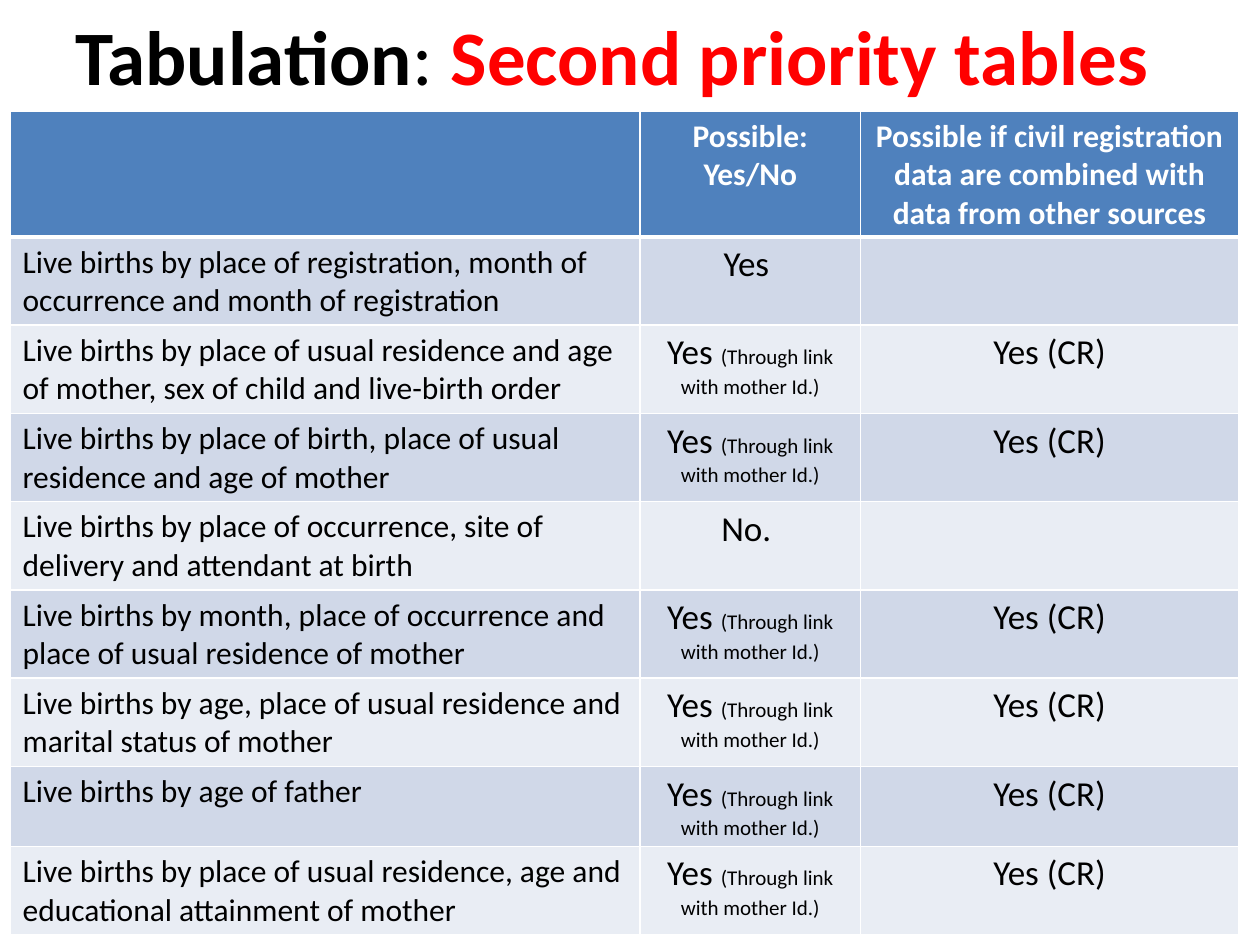
import pptx
import pptx.dml.color
import pptx.enum.text
import pptx.oxml.ns
import pptx.util
from lxml import etree

Inches = pptx.util.Inches
Pt = pptx.util.Pt
ALIGN = pptx.enum.text.PP_ALIGN

FONT = "Calibri"
COLORS = {
    "black": "000000",
    "white": "FFFFFF",
    "red": "FF0000",
    "header": "4F81BD",
    "odd": "D0D8E8",
    "even": "E9EDF4",
}

COL_WIDTHS = [5, 1.75, 3]
HEADER_HEIGHT, ROW_HEIGHT, SHORT_ROW_HEIGHT = 1, 0.69, 0.45

HEADERS = [
    "",
    "Possible: Yes/No",
    "Possible if civil registration data are combined with data from other sources",
]
YES = [("Yes ", 20)]
NO = [("No. ", 20)]
LINKED = YES + [("(Through link with mother Id.)", 12)]
COMBINED = [("Yes (CR)", 20)]
ROWS = [
    ("Live births by place of registration, month of occurrence and month of registration", YES, []),
    ("Live births by place of usual residence and age of mother, sex of child and live-birth order", LINKED, COMBINED),
    ("Live births by place of birth, place of usual residence and age of mother", LINKED, COMBINED),
    ("Live births by place of occurrence, site of delivery and attendant at birth", NO, []),
    ("Live births by month, place of occurrence and place of usual residence of mother", LINKED, COMBINED),
    ("Live births by age, place of usual residence and marital status of mother", LINKED, COMBINED),
    ("Live births by age of father", LINKED, COMBINED),
    ("Live births by place of usual residence, age and educational attainment of mother", LINKED, COMBINED),
]
SHORT_ROW = 7


def rgb(name):
    return pptx.dml.color.RGBColor.from_string(COLORS[name])


def add_title(s):
    tb = s.shapes.add_textbox(Inches(0.5), Inches(0.04), Inches(9), Inches(0.79))
    tf = tb.text_frame
    tf.word_wrap = True
    tf.vertical_anchor = pptx.enum.text.MSO_ANCHOR.MIDDLE
    p = tf.paragraphs[0]
    p.font.name, p.font.size = FONT, Pt(44)
    for text, color, bold in [
        ("Tabulation", "black", True),
        (": ", "black", False),
        ("Second priority tables", "red", True),
    ]:
        r = p.add_run()
        r.text = text
        r.font.bold = bold
        r.font.color.rgb = rgb(color)


def set_borders(cell, bottom):
    """Draw white lines of 1 pt, with the given width in points below."""
    tc_pr = cell._tc.get_or_add_tcPr()
    qn = pptx.oxml.ns.qn
    widths = {"a:lnL": 1, "a:lnR": 1, "a:lnT": 1, "a:lnB": bottom}
    for i, (tag, width) in enumerate(widths.items()):
        ln = etree.Element(qn(tag), w=str(Pt(width)))
        fill = etree.SubElement(ln, qn("a:solidFill"))
        etree.SubElement(fill, qn("a:srgbClr"), val=COLORS["white"])
        tc_pr.insert(i, ln)


def fill_cell(cell, runs, fill, color="black", bold=False, align=ALIGN.CENTER, bottom=1):
    cell.fill.solid()
    cell.fill.fore_color.rgb = rgb(fill)
    set_borders(cell, bottom)
    p = cell.text_frame.paragraphs[0]
    p.alignment = align
    p.font.name, p.font.size, p.font.bold = FONT, Pt(18), bold
    p.font.color.rgb = rgb(color)
    for text, size in runs:
        r = p.add_run()
        r.text = text
        r.font.size = Pt(size)


def add_priority_table(s):
    heights = [HEADER_HEIGHT] + [ROW_HEIGHT] * len(ROWS)
    heights[SHORT_ROW] = SHORT_ROW_HEIGHT
    table = s.shapes.add_table(
        len(heights), len(COL_WIDTHS), Inches(0.08), Inches(0.88),
        Inches(sum(COL_WIDTHS)), Inches(sum(heights)),
    ).table
    for col, width in zip(table.columns, COL_WIDTHS):
        col.width = Inches(width)
    for row, height in zip(table.rows, heights):
        row.height = Inches(height)

    for c, text in enumerate(HEADERS):
        runs = [(text, 18)] if text else []
        fill_cell(table.cell(0, c), runs, "header", "white", bold=True, bottom=3)
    for i, (topic, possible, combined) in enumerate(ROWS, start=1):
        fill = "odd" if i % 2 else "even"
        fill_cell(table.cell(i, 0), [(topic, 18)], fill, align=ALIGN.LEFT)
        fill_cell(table.cell(i, 1), possible, fill)
        fill_cell(table.cell(i, 2), combined, fill)


def main():
    prs = pptx.Presentation()
    prs.slide_width, prs.slide_height = Inches(10), Inches(7.5)
    s = prs.slides.add_slide(prs.slide_layouts[6])
    add_title(s)
    add_priority_table(s)
    prs.save("out.pptx")


if __name__ == "__main__":
    main()
